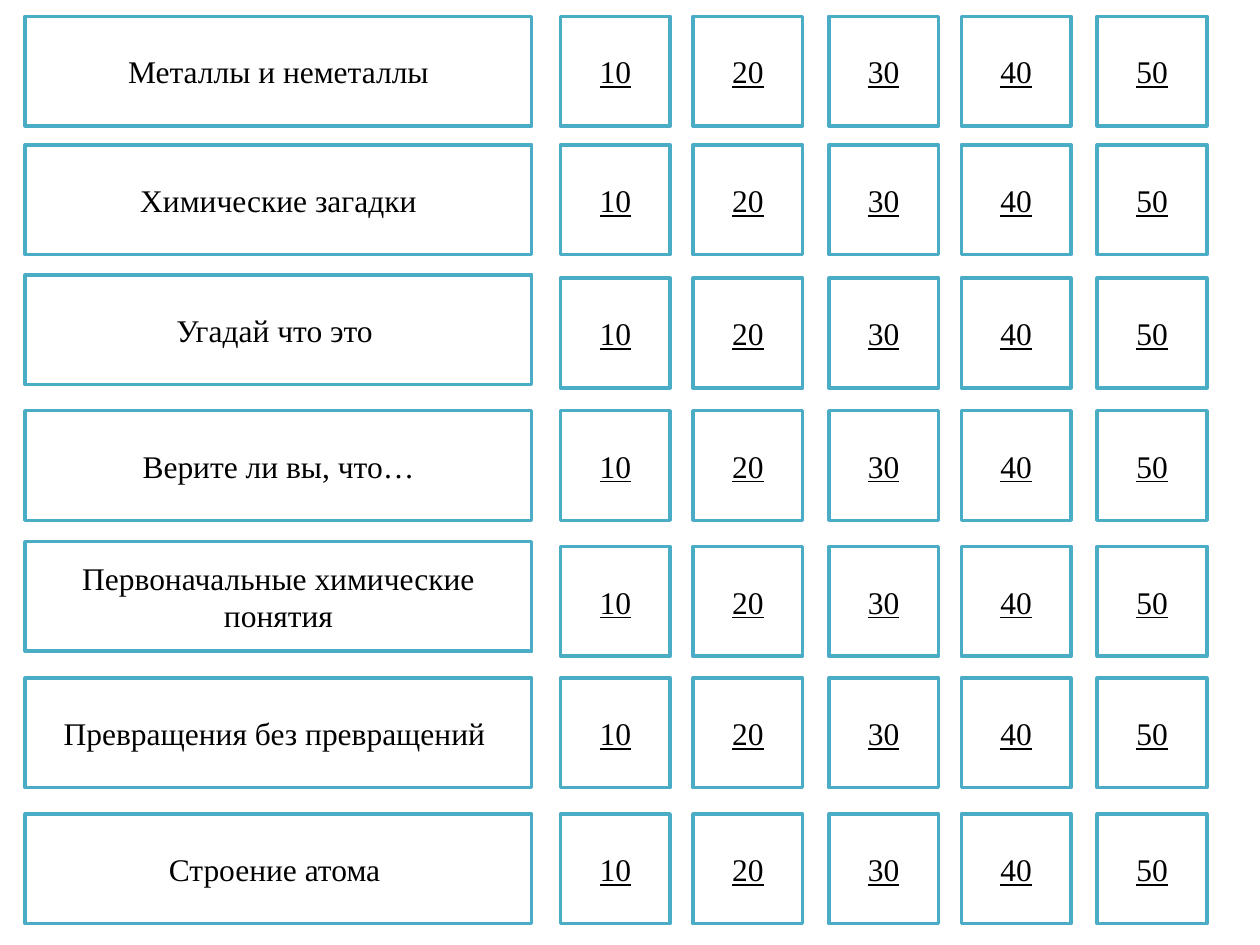
"""Build a quiz board with seven topics and five point tiles for each."""
from typing import NamedTuple

from pptx import Presentation
from pptx.dml.color import RGBColor
from pptx.enum.shapes import MSO_SHAPE
from pptx.enum.text import MSO_ANCHOR, PP_ALIGN
from pptx.slide import Slide
from pptx.util import Cm, Pt

COLORS = {"fill": "FFFFFF", "line": "4BACC6", "text": "000000"}
FONT = {"name": "Times New Roman", "size": Pt(18)}
SIDE = 2.21
LEFT, WIDTH = 0.51, 10.21
COLUMNS = {10: 11.3, 20: 13.97, 30: 16.71, 40: 19.38, 50: 22.12}


class Topic(NamedTuple):
    """Hold a topic with the tops of its label and its tiles in cm."""
    name: str
    top: float
    tiles: float


TOPICS = [
    Topic("Металлы и неметаллы", 0.33, 0.33),
    Topic("Химические загадки", 2.92, 2.92),
    Topic("Угадай что это ", 5.54, 5.61),
    Topic("Верите ли вы, что…", 8.28, 8.28),
    Topic("Первоначальные химические понятия", 10.92, 11.02),
    Topic("Превращения без превращений ", 13.67, 13.67),
    Topic("Строение атома ", 16.41, 16.41),
]


def color(key: str) -> RGBColor:
    """Return a named colour."""
    return RGBColor.from_string(COLORS[key])


def draw_box(slide: Slide, text: str, left: float, top: float,
             width: float = SIDE, **extra: bool) -> None:
    """Draw a framed box with centred text."""
    box = slide.shapes.add_shape(
        MSO_SHAPE.RECTANGLE, Cm(left), Cm(top), Cm(width), Cm(SIDE))
    box.shadow.inherit = False
    box.fill.solid()
    box.fill.fore_color.rgb = color("fill")
    box.line.color.rgb = color("line")
    box.line.width = Pt(2)
    frame = box.text_frame
    frame.word_wrap = True
    frame.vertical_anchor = MSO_ANCHOR.MIDDLE
    para = frame.paragraphs[0]
    para.alignment = PP_ALIGN.CENTER
    run = para.add_run()
    run.text = text
    for key, value in {**FONT, **extra}.items():
        setattr(run.font, key, value)
    run.font.color.rgb = color("text")


def draw_topic(slide: Slide, topic: Topic) -> None:
    """Draw a topic label and its row of point tiles."""
    draw_box(slide, topic.name, LEFT, topic.top, WIDTH)
    for points, left in COLUMNS.items():
        draw_box(slide, str(points), left, topic.tiles, underline=True)


def main() -> None:
    """Create and save the quiz board."""
    deck = Presentation()
    deck.slide_width, deck.slide_height = Cm(25.4), Cm(19.05)
    slide = deck.slides.add_slide(deck.slide_layouts[6])
    for topic in TOPICS:
        draw_topic(slide, topic)
    deck.save("out.pptx")


if __name__ == "__main__":
    main()
